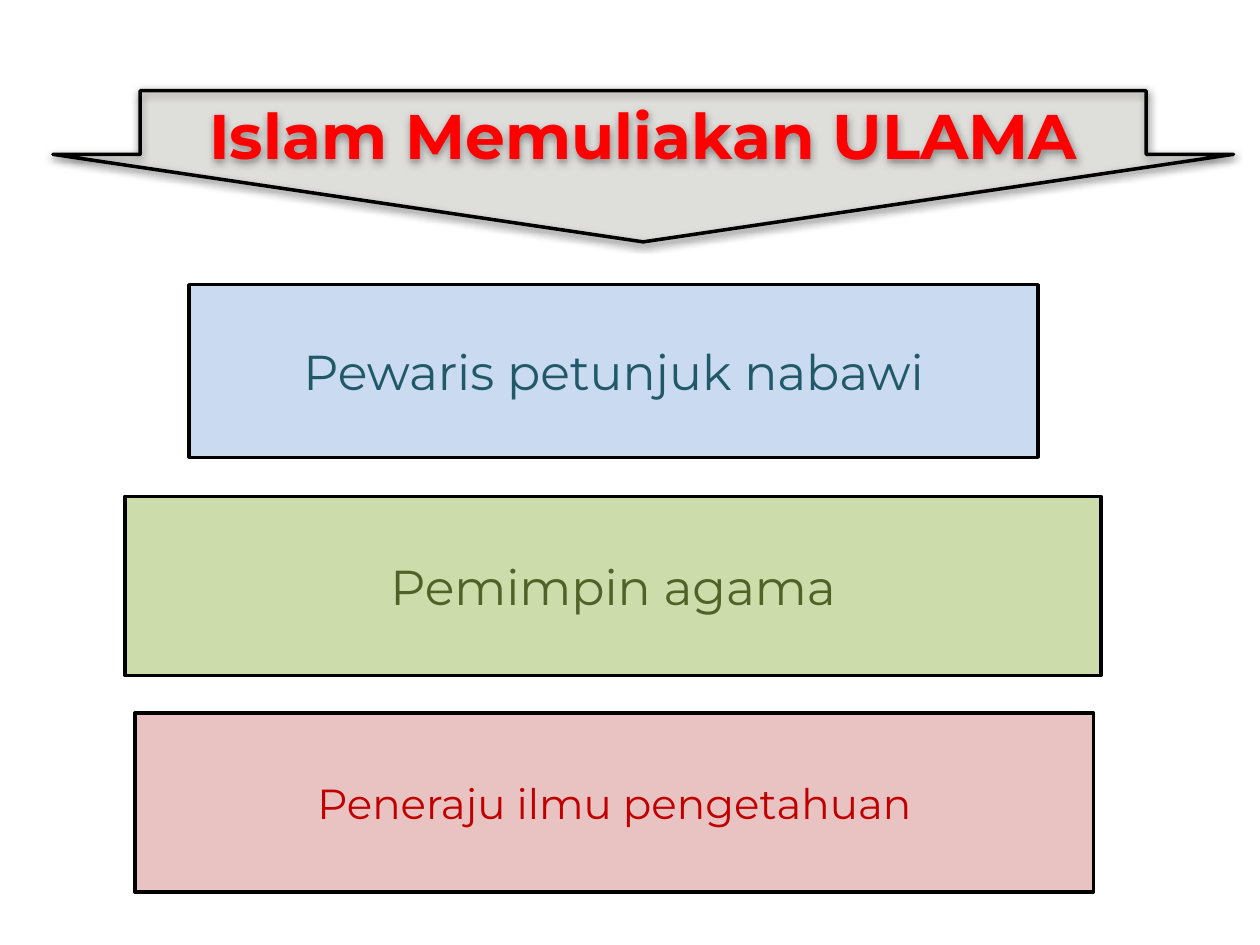
from lxml import etree
from pptx import Presentation
from pptx.dml.color import RGBColor
from pptx.enum.shapes import MSO_SHAPE as Shape
from pptx.enum.text import MSO_ANCHOR as Anchor, PP_ALIGN as Align
from pptx.oxml import parse_xml
from pptx.oxml.ns import nsdecls, qn
from pptx.util import Inches, Pt

COLORS = {
    "outline": "000000", "heading": "FF0000", "arrow": "EEECE1",
    "blue": "C6D9F1", "teal": "215968",
    "green": "C3D69B", "olive": "4F6228",
    "pink": "E6B9B8", "red": "C00000",
}
FONT = "Montserrat"
HEADING = "Islam Memuliakan ULAMA"
# text, left, top, width, height, fill, opacity %, text colour, text size
ROLES = [
    ("Pewaris petunjuk nabawi", 1.5, 2.26, 6.74, 1.37, "blue", 93, "teal", 28),
    ("Pemimpin agama", 0.99, 3.94, 7.75, 1.42, "green", 83, "olive", 28),
    ("Peneraju ilmu pengetahuan", 1.07, 5.66, 7.61, 1.42, "pink", 85, "red", 24),
]


def color(name):
    return RGBColor.from_string(COLORS[name])


def add_box(slide, kind, area, fill, opacity, text, text_color, size):
    box = slide.shapes.add_shape(kind, *(Inches(value) for value in area))
    box.shadow.inherit = False
    box.fill.solid()
    box.fill.fore_color.rgb = color(fill)
    fill_color = box.fill._xPr.find(qn("a:solidFill"))[0]
    etree.SubElement(fill_color, qn("a:alpha"), val=str(opacity * 1000))
    box.line.color.rgb = color("outline")
    box.line.width = Pt(2)
    frame = box.text_frame
    frame.word_wrap = True
    frame.vertical_anchor = Anchor.MIDDLE
    para = frame.paragraphs[0]
    para.text = text
    para.alignment = Align.CENTER
    para.font.name = FONT
    para.font.size = Pt(size)
    para.font.color.rgb = color(text_color)
    return box


deck = Presentation()
deck.slide_width, deck.slide_height = Inches(10), Inches(7.5)
page = deck.slides.add_slide(deck.slide_layouts[6])

# Heading arrow with a soft shadow
arrow = add_box(page, Shape.DOWN_ARROW, (0.42, 0.72, 9.37, 1.2),
                "arrow", 24, HEADING, "heading", 36)
arrow.adjustments[0], arrow.adjustments[1] = 0.852, 0.579
arrow.text_frame.vertical_anchor = Anchor.TOP
arrow.text_frame.paragraphs[0].font.bold = True
effects = arrow._element.spPr.find(qn("a:effectLst"))
effects.append(parse_xml(
    f'<a:outerShdw {nsdecls("a")} blurRad="{Inches(0.06)}" dist="{Inches(0.02)}" '
    'dir="5400000" algn="ctr" rotWithShape="0">'
    '<a:srgbClr val="000000"><a:alpha val="60000"/></a:srgbClr></a:outerShdw>'))

# Role boxes
for text, left, top, width, height, fill, opacity, text_color, size in ROLES:
    add_box(page, Shape.RECTANGLE, (left, top, width, height),
            fill, opacity, text, text_color, size)

deck.save("out.pptx")
